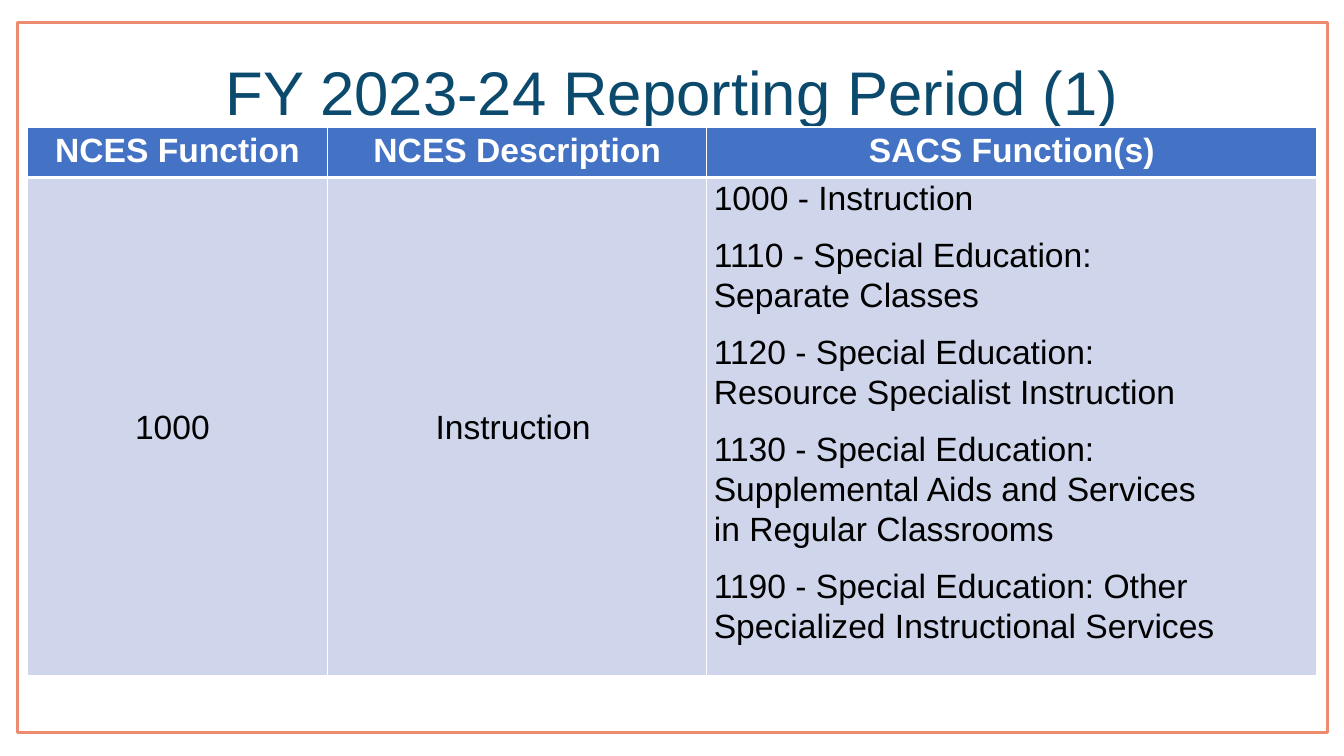
from dataclasses import dataclass

import lxml.etree
import pptx
import pptx.dml.color
import pptx.enum.shapes
import pptx.enum.text
import pptx.oxml.ns
import pptx.util

Inches = pptx.util.Inches
Pt = pptx.util.Pt
qn = pptx.oxml.ns.qn
ALIGN = pptx.enum.text.PP_ALIGN
ANCHOR = pptx.enum.text.MSO_ANCHOR

FRAME_BOX = [Inches(v) for v in (0.17, 0.22, 13, 7.05)]
COLUMN_WIDTHS = (2.98, 3.76, 6.05)
ROW_HEIGHTS = (0.39, 3.65)
WHITE, BLACK = "FFFFFF", "000000"


@dataclass(frozen=True)
class RowStyle:
    fill: str
    color: str
    bold: bool
    line_spacing: float
    borders: dict[str, float]


@dataclass(frozen=True)
class Entry:
    lines: tuple[str, ...]
    style: RowStyle
    align: ALIGN = ALIGN.LEFT
    anchor: ANCHOR = ANCHOR.TOP
    margins: tuple[float, float, float, float] = (0.1, 0.05, 0.1, 0.05)
    indent: float = 0
    space_after: float = 0


HEADER = RowStyle("4472C4", WHITE, True, 1, {"L": 1, "R": 1, "T": 1, "B": 3})
BODY = RowStyle("CFD5EA", BLACK, False, 1.07, {"L": 1, "R": 1, "T": 3, "B": 1})


def heading(text: str) -> Entry:
    return Entry((text,), HEADER, ALIGN.CENTER)


def single_value(text: str) -> Entry:
    return Entry((text,), BODY, anchor=ANCHOR.MIDDLE, margins=(0.07, 0, 0.07, 0), indent=1)


SACS_FUNCTIONS = (
    "1000 - Instruction",
    "1110 - Special Education: Separate Classes",
    "1120 - Special Education: Resource Specialist Instruction",
    "1130 - Special Education: Supplemental Aids and Services in Regular Classrooms",
    "1190 - Special Education: Other Specialized Instructional Services",
)
ROWS = (
    (heading("NCES Function"), heading("NCES Description"), heading("SACS Function(s)")),
    (
        single_value("1000"),
        single_value("Instruction"),
        Entry(SACS_FUNCTIONS, BODY, margins=(0.07, 0, 1, 0), space_after=12),
    ),
)


def rgb(color: str) -> pptx.dml.color.RGBColor:
    return pptx.dml.color.RGBColor.from_string(color)


def set_font(paragraph, size: float, color: str, bold: bool = False) -> None:
    font = paragraph.font
    font.name, font.size, font.bold = "Arial", Pt(size), bold
    font.color.rgb = rgb(color)


def set_borders(cell, widths: dict[str, float]) -> None:
    properties = cell._tc.get_or_add_tcPr()
    for side, width in widths.items():
        line = lxml.etree.SubElement(properties, qn(f"a:ln{side}"), w=str(Pt(width)))
        fill = lxml.etree.SubElement(line, qn("a:solidFill"))
        lxml.etree.SubElement(fill, qn("a:srgbClr"), val=WHITE)


def fill_cell(cell, entry: Entry) -> None:
    style = entry.style
    set_borders(cell, style.borders)
    cell.fill.solid()
    cell.fill.fore_color.rgb = rgb(style.fill)
    cell.vertical_anchor = entry.anchor
    cell.margin_left, cell.margin_top, cell.margin_right, cell.margin_bottom = map(
        Inches, entry.margins
    )
    cell.text = "\n".join(entry.lines)
    for paragraph in cell.text_frame.paragraphs:
        paragraph.alignment = entry.align
        paragraph.line_spacing = style.line_spacing
        paragraph.space_after = Pt(entry.space_after)
        if entry.indent:
            properties = paragraph._p.get_or_add_pPr()
            properties.set("marL", str(Inches(entry.indent)))
            properties.set("indent", "0")
        set_font(paragraph, 24, style.color, style.bold)


def add_frame(slide) -> None:
    frame = slide.shapes.add_shape(pptx.enum.shapes.MSO_SHAPE.RECTANGLE, *FRAME_BOX)
    frame.shadow.inherit = False
    frame.fill.background()
    frame.line.color.rgb = rgb("ED8B6F")
    frame.line.width = Pt(2)


def add_title(slide, text: str) -> None:
    left, top, width, _ = FRAME_BOX
    title = slide.shapes.add_textbox(left, top, width, Inches(1.45)).text_frame
    title.word_wrap = True
    title.vertical_anchor = ANCHOR.MIDDLE
    title.text = text
    paragraph = title.paragraphs[0]
    paragraph.alignment = ALIGN.CENTER
    paragraph.line_spacing = 0.9
    set_font(paragraph, 44, "0C4A6D")


def add_function_table(slide) -> None:
    table = slide.shapes.add_table(
        len(ROWS), len(COLUMN_WIDTHS), Inches(0.27), Inches(1.26),
        Inches(sum(COLUMN_WIDTHS)), Inches(sum(ROW_HEIGHTS)),
    ).table
    table.horz_banding = False
    for column, width in zip(table.columns, COLUMN_WIDTHS):
        column.width = Inches(width)
    for row, height, entries in zip(table.rows, ROW_HEIGHTS, ROWS):
        row.height = Inches(height)
        for cell, entry in zip(row.cells, entries):
            fill_cell(cell, entry)


def main() -> None:
    presentation = pptx.Presentation()
    presentation.slide_width = Inches(13.33)
    presentation.slide_height = Inches(7.5)
    slide = presentation.slides.add_slide(presentation.slide_layouts[6])
    add_frame(slide)
    add_title(slide, "FY 2023-24 Reporting Period (1)")
    add_function_table(slide)
    presentation.save("out.pptx")


if __name__ == "__main__":
    main()
